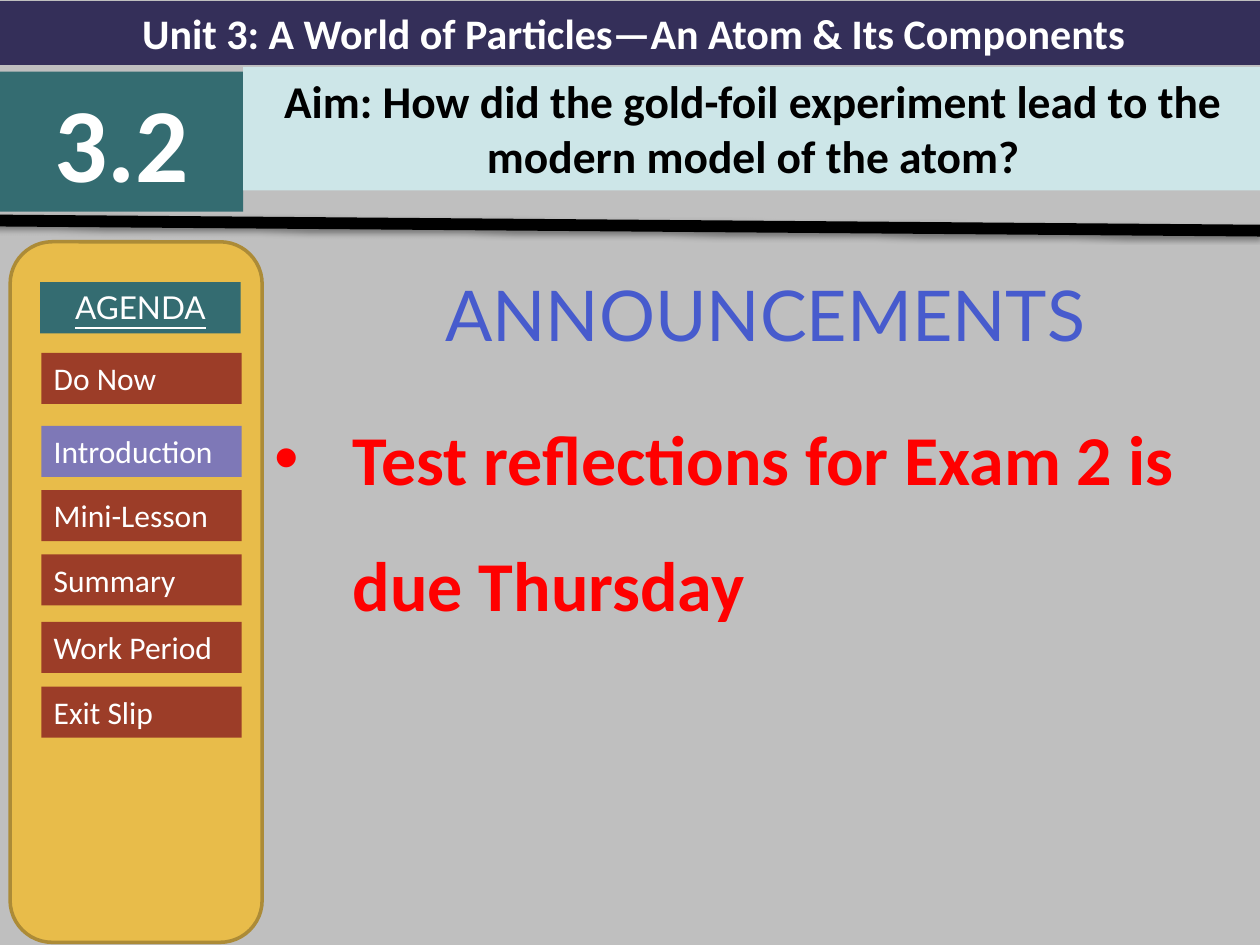
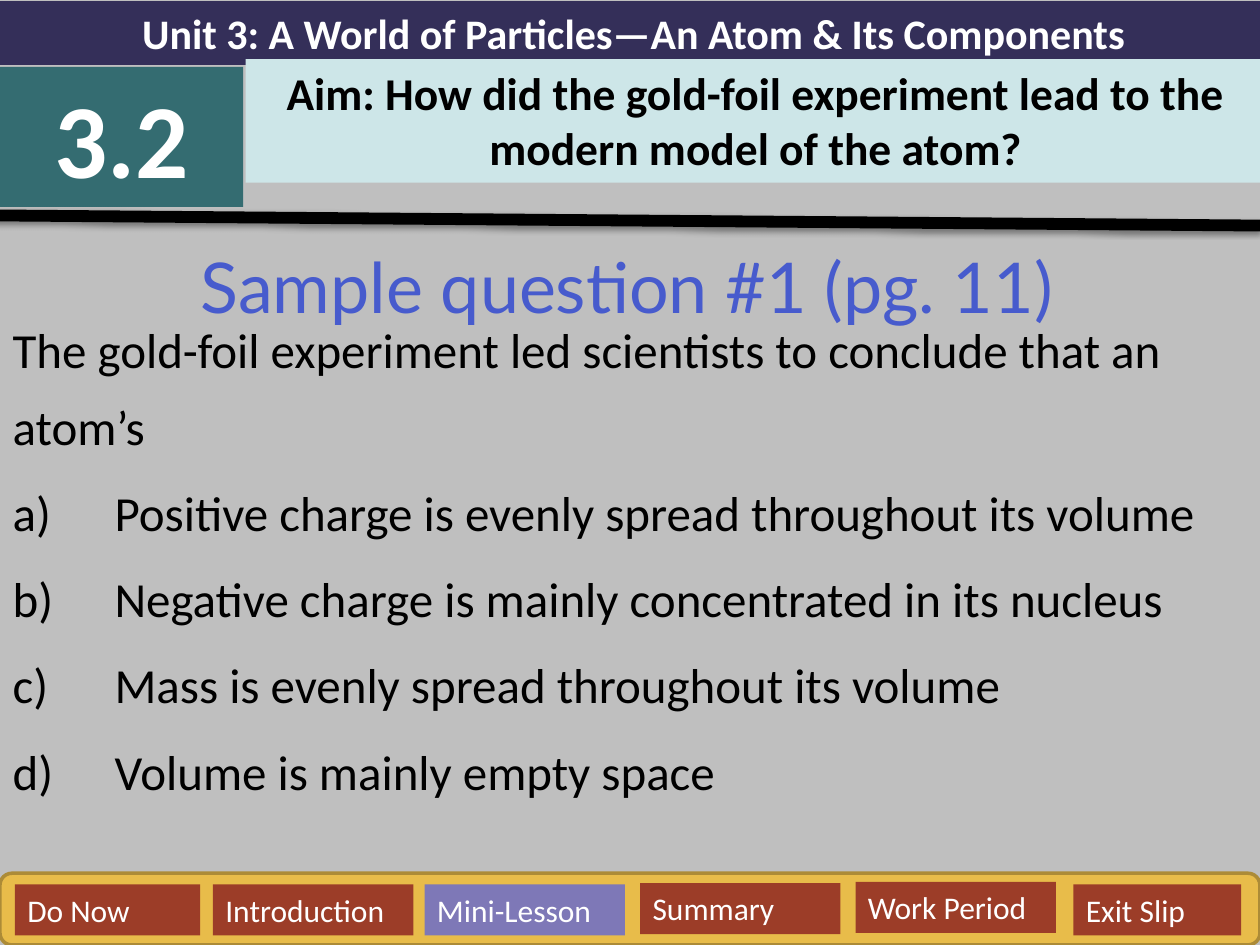
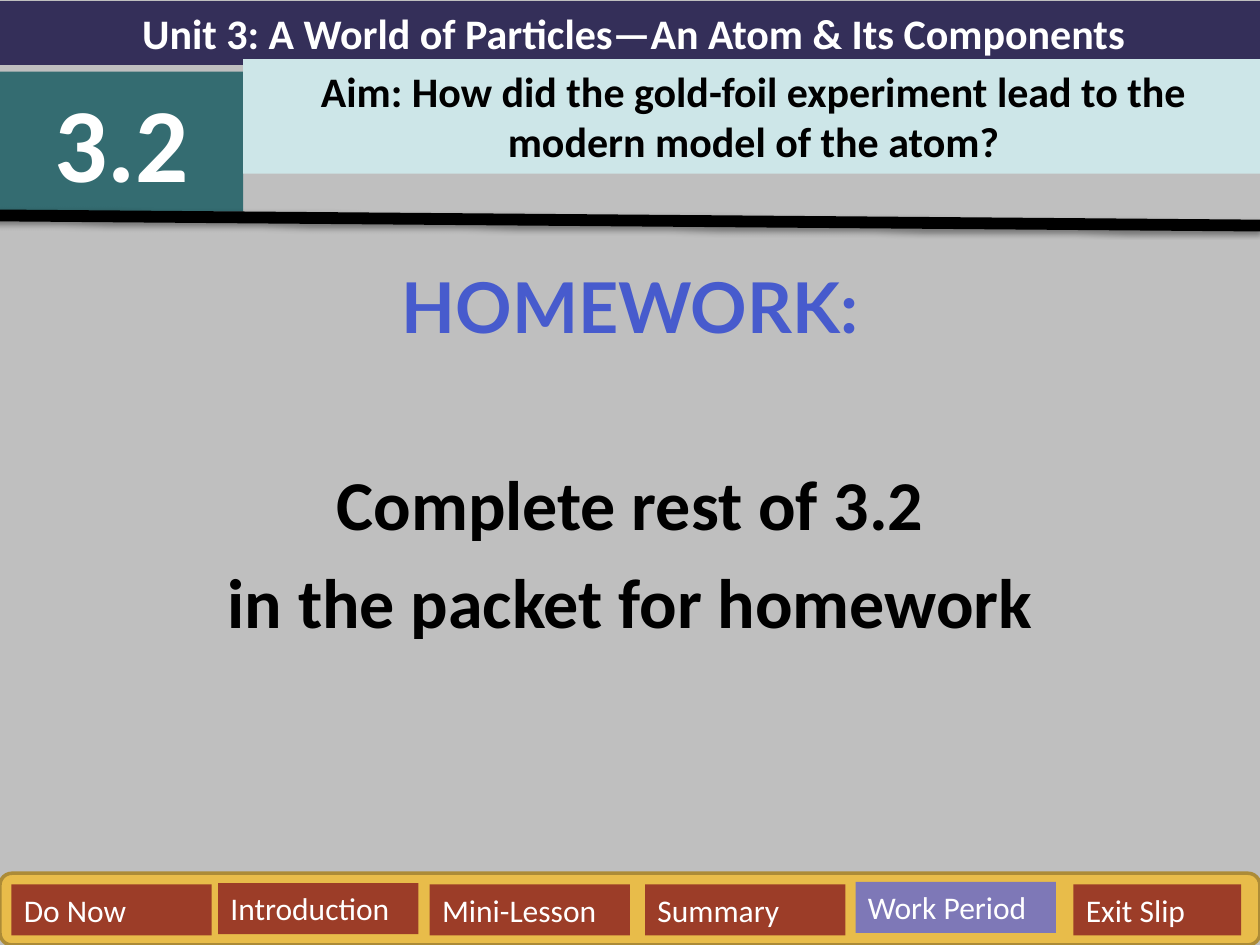
from pptx import Presentation
from pptx.dml.color import RGBColor
from pptx.enum import shapes, text
from pptx.oxml import ns, parse_xml
from pptx.util import Pt

# Theme
THEME = {
    "background": "BFBFBF", "unit": "342F59", "lesson": "346C71", "aim": "CDE6E8",
    "panel": "E8BC4A", "panel edge": "AC8B37", "tab": "9C3D28", "current tab": "7E78B7",
    "heading": "475BCD", "alert": "FF0000", "dark": "000000", "light": "FFFFFF",
    "heading font": "Lato", "text font": "Calibri",
    "number size": 60, "heading size": 40, "question size": 28, "unit size": 24, "tab size": 18,
}
LEFT, CENTER = text.PP_ALIGN.LEFT, text.PP_ALIGN.CENTER
UNIT = "Unit 3: A World of Particles—An Atom & Its Components"
AIM = "Aim: How did the gold-foil experiment lead to the modern model of the atom?"
STEPS = ["Do Now", "Introduction", "Mini-Lesson", "Summary", "Work Period", "Exit Slip"]
TAB_WIDTH, TAB_HEIGHT = 114.5, 29.2
BULLET = '<a:buFont %s typeface="Arial"/>', '<a:buChar %s char="•"/>'
LETTERS = ('<a:buAutoNum %s type="alphaLcParenR"/>',)
SHADOW = ('<a:effectLst %s><a:outerShdw blurRad="39370" dist="20320" dir="5400000" '
          'rotWithShape="0"><a:srgbClr val="000000"><a:alpha val="38000"/></a:srgbClr>'
          '</a:outerShdw></a:effectLst>')

# Slides: boxes are left, top, width, height; tabs are left, top, width
SLIDES = [
    {
        "heading": "ANNOUNCEMENTS", "heading box": (149.8, 146.9, 574.6, 60),
        "heading spacing": 1.1, "heading bold": False,
        "body box": (149.8, 210, 574.6, 330), "body spacing": 1.5, "align": LEFT,
        "body font": {"size": Pt(40), "bold": True}, "body color": "alert",
        "body": [("Test reflections for Exam 2 is due Thursday", 44.6, BULLET)],
        "lesson top": 41, "aim box": (139, 38.2, 583.2, 70.6), "aim size": 26, "rule top": 126,
        "panel": (5.8, 138.2, 144, 400.3), "current": "Introduction",
        "tabs": [(23.6, top, TAB_WIDTH) for top in (201.6, 243.4, 280.1, 316.8, 355.4, 392.4)],
    },
    {
        "heading": "Sample question #1 (pg. 11)", "heading box": (-3.6, 135.4, 723.6, 60),
        "heading spacing": 1, "heading bold": False,
        "body box": (0, 169, 720, 330), "body spacing": 1.3, "align": LEFT,
        "body font": {"size": Pt(THEME["question size"]), "bold": False}, "body color": "dark",
        "body": [("The gold-foil experiment led scientists to conclude that an atom’s", 0, ())] + [
            (answer, 58.3, LETTERS) for answer in (
                "Positive charge is evenly spread throughout its volume",
                "Negative charge is mainly concentrated in its nucleus",
                "Mass is evenly spread throughout its volume",
                "Volume is mainly empty space")],
        "lesson top": 38.2, "aim box": (140.4, 33.8, 583.2, 70.6), "aim size": 26,
        "rule top": 123.1, "panel": (0, 499, 720, 41), "current": "Mini-Lesson",
        "tabs": [(8.6, 505.4, 105.8), (121.7, 505.4, TAB_WIDTH), (242.6, 505.4, TAB_WIDTH),
                 (365.8, 504.7, TAB_WIDTH), (488.9, 504, TAB_WIDTH), (613.4, 505.4, 95.8)],
    },
    {
        "heading": "HOMEWORK:", "heading box": (0, 146.9, 720, 60),
        "heading spacing": 1, "heading bold": True,
        "body box": (0, 259.8, 720, 280), "body spacing": 1, "align": CENTER,
        "body font": {"size": Pt(40), "bold": True}, "body color": "dark",
        "body": [("Complete rest of 3.2", 0, ()), ("in the packet for homework", 0, ())],
        "lesson top": 41, "aim box": (139, 33.8, 583.2, 65.5), "aim size": 24, "rule top": 123.1,
        "panel": (0, 499, 720, 41), "current": "Work Period",
        "tabs": [(6.5, 505.4, TAB_WIDTH), (124.6, 504.7, TAB_WIDTH), (245.5, 505.4, TAB_WIDTH),
                 (368.6, 505.4, TAB_WIDTH), (488.9, 504, TAB_WIDTH), (613.4, 505.4, 95.8)],
    },
]


def write(paragraph, words, color, align=CENTER, face="text font", **font):
    run = paragraph.add_run()
    run.text = words
    paragraph.alignment = align
    run.font.color.rgb = RGBColor.from_string(THEME[color])
    for key, value in {"name": THEME[face], **font}.items():
        setattr(run.font, key, value)


def add_box(slide, box, fill, kind=shapes.MSO_SHAPE.RECTANGLE):
    block = slide.shapes.add_shape(kind, *map(Pt, box))
    block.shadow.inherit = False
    block.fill.solid()
    block.fill.fore_color.rgb = RGBColor.from_string(THEME[fill])
    block.line.fill.background()
    block.text_frame.vertical_anchor = text.MSO_ANCHOR.TOP
    return block


prs = Presentation()
prs.slide_width, prs.slide_height = Pt(720), Pt(540)
backdrop = prs.slide_master.background.fill
backdrop.solid()
backdrop.fore_color.rgb = RGBColor.from_string(THEME["background"])

for content in SLIDES:
    slide = prs.slides.add_slide(prs.slide_layouts[0])
    heading, body = slide.placeholders

    # Heading and body placeholders
    for holder, box in ((heading, content["heading box"]), (body, content["body box"])):
        for side, length in zip(("left", "top", "width", "height"), box):
            setattr(holder, side, Pt(length))
        for key, value in {"word_wrap": True, "auto_size": text.MSO_AUTO_SIZE.NONE,
                           "vertical_anchor": text.MSO_ANCHOR.TOP}.items():
            setattr(holder.text_frame, key, value)
    title_line = heading.text_frame.paragraphs[0]
    title_line.line_spacing = content["heading spacing"]
    write(title_line, content["heading"], "heading", face="heading font",
          size=Pt(THEME["heading size"]), bold=content["heading bold"])
    for number, (words, indent, marks) in enumerate(content["body"]):
        line = body.text_frame.add_paragraph() if number else body.text_frame.paragraphs[0]
        line.line_spacing = content["body spacing"]
        line.space_before = Pt(round(content["body font"]["size"].pt * 0.2, 1)) if number else Pt(0)
        write(line, words, content["body color"], content["align"], **content["body font"])
        properties = line._p.get_or_add_pPr()
        if indent:
            properties.set("marL", str(Pt(indent)))
            properties.set("indent", str(-Pt(indent)))
        for mark in marks:
            properties.append(parse_xml(mark % ns.nsdecls("a")))

    # Header bands
    for box, fill, words, color, size in (
            ((0, 0.7, 724.3, 36.4), "unit", UNIT, "light", THEME["unit size"]),
            ((0, content["lesson top"], 139, 80), "lesson", "3.2", "light", THEME["number size"]),
            (content["aim box"], "aim", AIM, "dark", content["aim size"])):
        band = add_box(slide, box, fill)
        write(band.text_frame.paragraphs[0], words, color, size=Pt(size), bold=True)

    # Rule under the header
    rule = slide.shapes.add_connector(shapes.MSO_CONNECTOR.STRAIGHT, Pt(-3.6),
                                      Pt(content["rule top"]), Pt(720), Pt(content["rule top"] + 5.8))
    rule.line.width = Pt(6.75)
    rule.line.color.rgb = RGBColor.from_string(THEME["dark"])
    rule._element.spPr.append(parse_xml(SHADOW % ns.nsdecls("a")))

    # Agenda panel and its tabs
    panel = add_box(slide, content["panel"], "panel", shapes.MSO_SHAPE.ROUNDED_RECTANGLE)
    panel.line.color.rgb = RGBColor.from_string(THEME["panel edge"])
    panel.line.width = Pt(2)
    if content is SLIDES[0]:
        agenda = add_box(slide, (23, 161.3, TAB_WIDTH, TAB_HEIGHT), "lesson")
        write(agenda.text_frame.paragraphs[0], "AGENDA", "light", face="heading font",
              size=Pt(THEME["tab size"]), underline=True)
    for step, (left, top, width) in zip(STEPS, content["tabs"]):
        fill = "current tab" if step == content["current"] else "tab"
        tab = add_box(slide, (left, top, width, TAB_HEIGHT), fill)
        write(tab.text_frame.paragraphs[0], step, "light", LEFT, size=Pt(THEME["tab size"]))

prs.save("out.pptx")
